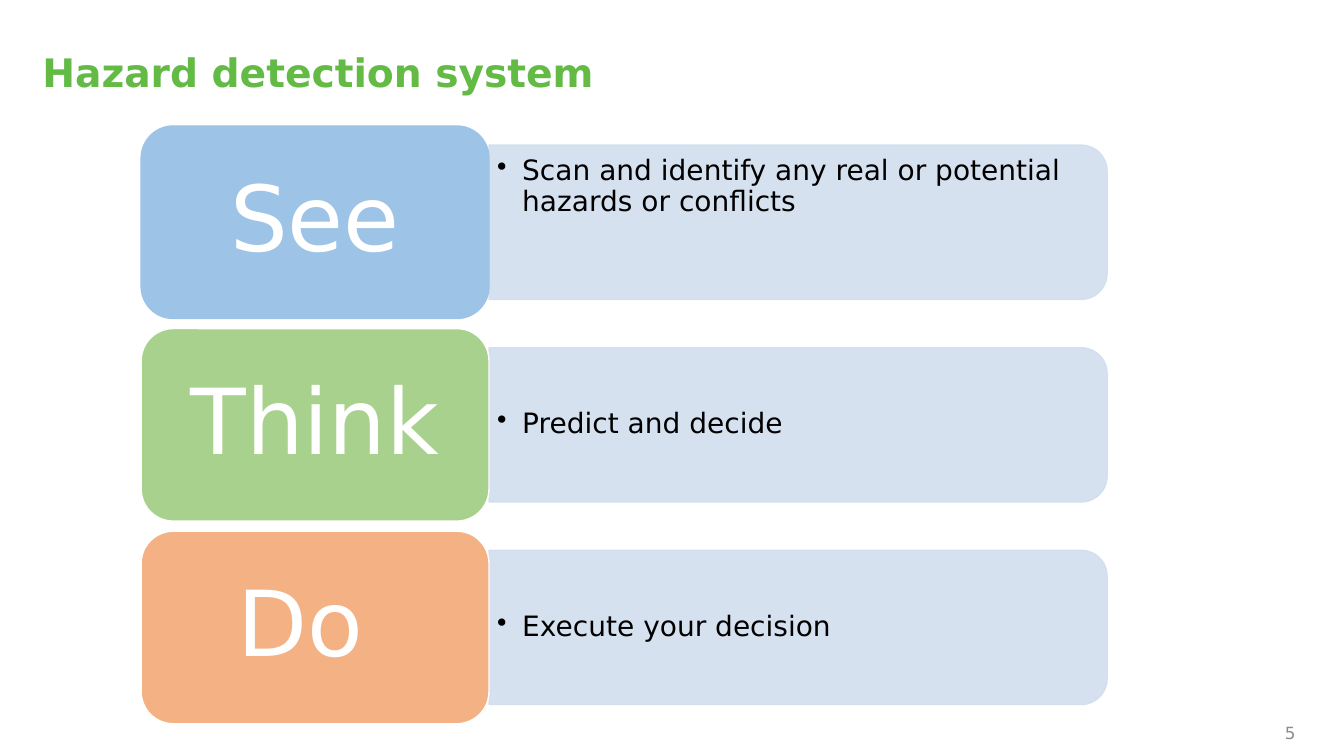
from pptx import Presentation
from pptx.dml.color import RGBColor
from pptx.enum.shapes import MSO_SHAPE
from pptx.enum.text import MSO_ANCHOR, PP_ALIGN
from pptx.oxml.ns import qn
from pptx.util import Inches, Pt
from lxml import etree

LEFT, CENTER, RIGHT = PP_ALIGN.LEFT, PP_ALIGN.CENTER, PP_ALIGN.RIGHT
TOP, MIDDLE, BOTTOM = MSO_ANCHOR.TOP, MSO_ANCHOR.MIDDLE, MSO_ANCHOR.BOTTOM
TILE, PANEL = MSO_SHAPE.ROUNDED_RECTANGLE, MSO_SHAPE.ROUND_2_SAME_RECTANGLE

# Content
TITLE = "Hazard detection system"
PAGE_NUMBER = "5"
STEPS = [
    # word, tile fill, tile line, description, description anchor
    ("See", "blue", "blue",
     "Scan and identify any real or potential hazards or conflicts", TOP),
    ("Think", "green", "white", "Predict and decide", MIDDLE),
    ("Do ", "orange", "white", "Execute your decision", MIDDLE),
]
COLORS = {
    "title": "63BB46", "number": "8C8C8C", "text": "000000", "white": "FFFFFF",
    "panel": "D2DEEF", "blue": "9DC3E6", "green": "A9D18E", "orange": "F4B183",
}
FONT = "DejaVu Sans"
FORMATS = {
    "title": {"size": Pt(28), "bold": True},
    "number": {"size": Pt(12)},
    "step": {"size": Pt(65)},
    "description": {"size": Pt(20)},
}

# Layout in inches
TILE_LEFT, TILE_TOP, TILE_WIDTH, TILE_HEIGHT = 1.4, 1.25, 3.45, 1.91
ROW_GAP = 0.1
PANEL_WIDTH, PANEL_HEIGHT = 6.13, 1.53
TEXT_WIDTH, TEXT_HEIGHT = 6.06, 1.38


def rgb(name):
    return RGBColor.from_string(COLORS[name])


def write(shape, text, style, color, align=LEFT, anchor=MIDDLE,
          inset=(0, 0), spacing=0.9, bullet=False):
    frame = shape.text_frame
    across, down = map(Inches, inset)
    settings = {"word_wrap": True, "vertical_anchor": anchor,
                "margin_left": across, "margin_right": across,
                "margin_top": down, "margin_bottom": down}
    for name, value in settings.items():
        setattr(frame, name, value)
    para = frame.paragraphs[0]
    para.alignment = align
    para.line_spacing = spacing
    if bullet:
        properties = para._p.get_or_add_pPr()
        properties.set("marL", str(Inches(0.25)))
        properties.set("indent", str(-Inches(0.25)))
        etree.SubElement(properties, qn("a:buChar")).set("char", "•")
    span = para.add_run()
    span.text = text
    span.font.name = FONT
    span.font.color.rgb = rgb(color)
    for name, value in FORMATS[style].items():
        setattr(span.font, name, value)


def add_text(page, area, *args, **options):
    box = page.shapes.add_textbox(*map(Inches, area))
    write(box, *args, **options)


def add_block(page, kind, area, fill, line):
    shape = page.shapes.add_shape(kind, *map(Inches, area))
    shape.shadow.inherit = False
    shape.fill.solid()
    shape.fill.fore_color.rgb = rgb(fill)
    shape.line.color.rgb = rgb(line)
    shape.line.width = Pt(1)
    return shape


def add_panel(page, left, middle):
    # The shape is turned a quarter so its rounded corners face right
    area = (left + (PANEL_WIDTH - PANEL_HEIGHT) / 2, middle - PANEL_WIDTH / 2,
            PANEL_HEIGHT, PANEL_WIDTH)
    panel = add_block(page, PANEL, area, "panel", "panel")
    panel.rotation = 90
    for color in panel._element.spPr.iter(qn("a:srgbClr")):
        etree.SubElement(color, qn("a:alpha")).set("val", "90000")


def main():
    deck = Presentation()
    deck.slide_width, deck.slide_height = Inches(13.33), Inches(7.5)
    page = deck.slides.add_slide(deck.slide_layouts[6])

    # Title and page number
    add_text(page, (0.42, 0.49, 11.75, 0.51), TITLE, "title", "title")
    add_text(page, (9.85, 6.97, 3, 0.4), PAGE_NUMBER, "number", "number",
             align=RIGHT, anchor=BOTTOM, spacing=1.0)

    # One row per step: panel, description, tile
    text_left = TILE_LEFT + TILE_WIDTH
    for row, (word, fill, line, description, anchor) in enumerate(STEPS):
        top = TILE_TOP + row * (TILE_HEIGHT + ROW_GAP)
        middle = top + TILE_HEIGHT / 2
        add_panel(page, text_left, middle)
        add_text(page, (text_left, middle - TEXT_HEIGHT / 2, TEXT_WIDTH, TEXT_HEIGHT),
                 description, "description", "text", anchor=anchor,
                 inset=(0.08, 0.04), bullet=True)
        tile = add_block(page, TILE, (TILE_LEFT, top, TILE_WIDTH, TILE_HEIGHT), fill, line)
        write(tile, word, "step", "white", align=CENTER, inset=(0.27, 0.14))

    deck.save("out.pptx")


if __name__ == "__main__":
    main()
